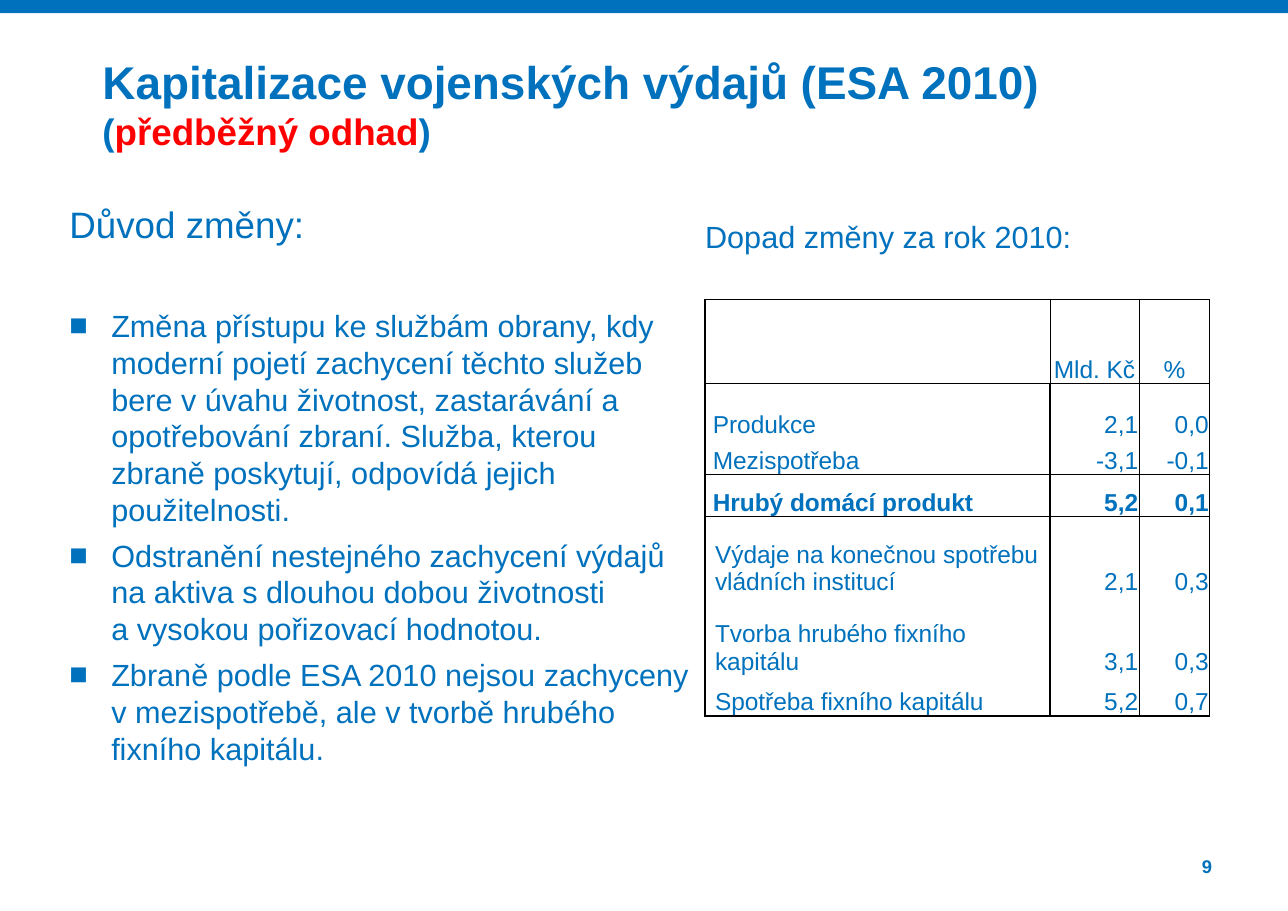
from dataclasses import dataclass

from lxml import etree
from pptx import Presentation
from pptx import util as u
from pptx.dml.color import RGBColor
from pptx.enum import shapes, text
from pptx.oxml import ns
from pptx.slide import Slide
from pptx.table import _Cell
from pptx.text.text import Font, TextFrame, _Paragraph

COLORS = {"blue": "0071BC", "red": "FF0000", "black": "000000"}
FONT = "Arial"
BULLET_INDENT = u.Inches(0.38)
TABLE_TEXT_SIZE = 16
COLUMN_WIDTHS = (3.13, 0.81, 0.64)

BULLETS = (
    "Změna přístupu ke službám obrany, kdy moderní pojetí zachycení těchto služeb bere "
    "v úvahu životnost, zastarávání a opotřebování zbraní. Služba, kterou zbraně "
    "poskytují, odpovídá jejich použitelnosti.",
    "Odstranění nestejného zachycení výdajů na aktiva s dlouhou dobou životnosti\v"
    "a vysokou pořizovací hodnotou.",
    "Zbraně podle ESA 2010 nejsou zachyceny v mezispotřebě, ale v tvorbě hrubého "
    "fixního kapitálu.",
)


@dataclass(frozen=True)
class ImpactRow:
    label: str
    billions: str
    percent: str
    height: float
    label_margin: float = 0.07
    bold: bool = False
    line_above: float = 0
    line_below: float = 0
    header: bool = False


ROWS = (
    ImpactRow("", "Mld. Kč", "%", 0.76, line_above=1, line_below=0.5, header=True),
    ImpactRow("Produkce", "2,1", "0,0", 0.5, line_above=0.5),
    ImpactRow("Mezispotřeba", "-3,1", "-0,1", 0.33, line_below=0.5),
    ImpactRow("Hrubý domácí produkt", "5,2", "0,1", 0.38, bold=True,
              line_above=0.5, line_below=0.5),
    ImpactRow("Výdaje na konečnou spotřebu vládních institucí", "2,1", "0,3", 0.72,
              label_margin=0.09, line_above=0.5),
    ImpactRow("Tvorba hrubého fixního kapitálu", "3,1", "0,3", 0.72, label_margin=0.09),
    ImpactRow("Spotřeba fixního kapitálu", "5,2", "0,7", 0.37, label_margin=0.09,
              line_below=1),
)


def format_font(font: Font, size: float, bold: bool = False, color: str = "blue") -> None:
    font.name = FONT
    font.size = u.Pt(size)
    font.bold = bold
    font.color.rgb = RGBColor.from_string(COLORS[color])


def format_runs(paragraph: _Paragraph, size: float, bold: bool = False) -> None:
    for run in paragraph.runs:
        format_font(run.font, size, bold)


def prepare_frame(frame: TextFrame, vertical_margin: float = 0) -> None:
    """Wrap text from the top, without autofit or side margins."""
    frame.word_wrap = True
    frame.auto_size = text.MSO_AUTO_SIZE.NONE
    frame.vertical_anchor = text.MSO_ANCHOR.TOP
    frame.margin_left = frame.margin_right = 0
    frame.margin_top = frame.margin_bottom = u.Inches(vertical_margin)


def place(shape, left: float, top: float, width: float, height: float) -> None:
    shape.left, shape.top = u.Inches(left), u.Inches(top)
    shape.width, shape.height = u.Inches(width), u.Inches(height)


def set_bullet(paragraph: _Paragraph, character: str = "") -> None:
    """Give a hanging bullet, or clear the inherited one if no character is given."""
    properties = paragraph._p.get_or_add_pPr()
    indent = BULLET_INDENT if character else 0
    properties.set("marL", str(indent))
    properties.set("indent", str(-indent))
    if character:
        etree.SubElement(properties, ns.qn("a:buFont"), typeface=FONT)
        etree.SubElement(properties, ns.qn("a:buChar"), char=character)
    else:
        etree.SubElement(properties, ns.qn("a:buNone"))


def add_top_bar(slide: Slide, width: int) -> None:
    bar = slide.shapes.add_shape(shapes.MSO_SHAPE.RECTANGLE, 0, 0, width, u.Inches(0.12))
    bar.shadow.inherit = False
    bar.fill.solid()
    bar.fill.fore_color.rgb = RGBColor.from_string(COLORS["blue"])
    bar.line.fill.background()


def fill_title(slide: Slide) -> None:
    title = slide.shapes.title
    place(title, 0.93, 0.49, 10.08, 1.06)
    frame = title.text_frame
    prepare_frame(frame)
    frame.text = "Kapitalizace vojenských výdajů (ESA 2010)"
    heading, subtitle = frame.paragraphs[0], frame.add_paragraph()
    format_runs(heading, 30, bold=True)
    for part, color in (("(", "blue"), ("předběžný odhad", "red"), (")", "blue")):
        run = subtitle.add_run()
        run.text = part
        format_font(run.font, 24, bold=True, color=color)
    for paragraph in frame.paragraphs:
        paragraph.alignment = text.PP_ALIGN.LEFT


def fill_reasons(slide: Slide) -> None:
    body = slide.placeholders[1]
    place(body, 0.63, 1.76, 5.63, 5.61)
    frame = body.text_frame
    prepare_frame(frame)
    frame.text = "Důvod změny:"
    heading = frame.paragraphs[0]
    set_bullet(heading)
    heading.line_spacing = u.Pt(34)
    heading.space_before = u.Pt(0)
    format_runs(heading, 24)
    for index, reason in enumerate(BULLETS):
        paragraph = frame.add_paragraph()
        paragraph.text = reason
        set_bullet(paragraph, "■")
        paragraph.space_before = u.Pt(6 if index else 40)
        format_runs(paragraph, 20)


def add_label(slide: Slide, label: str, box: tuple[float, float, float, float], size: float,
              bold: bool = False, alignment=text.PP_ALIGN.LEFT,
              vertical_margin: float = 0) -> None:
    textbox = slide.shapes.add_textbox(*map(u.Inches, box))
    prepare_frame(textbox.text_frame, vertical_margin)
    textbox.text_frame.text = label
    paragraph = textbox.text_frame.paragraphs[0]
    paragraph.alignment = alignment
    format_runs(paragraph, size, bold)


def set_borders(cell: _Cell, widths: dict[str, float]) -> None:
    """Draw cell edges by side letter; a zero width hides the edge."""
    properties = cell._tc.get_or_add_tcPr()
    for index, (side, width) in enumerate(widths.items()):
        line = etree.Element(ns.qn(f"a:ln{side}"), w=str(u.Pt(width)))
        if width:
            fill = etree.SubElement(line, ns.qn("a:solidFill"))
            etree.SubElement(fill, ns.qn("a:srgbClr"), val=COLORS["black"])
        else:
            etree.SubElement(line, ns.qn("a:noFill"))
        properties.insert(index, line)


def fill_cell(cell: _Cell, row: ImpactRow, column: int) -> None:
    cell.fill.background()
    inner = 0.5 if row.header else 1
    set_borders(cell, {"L": inner if column else 1,
                       "R": inner if column < len(COLUMN_WIDTHS) - 1 else 1,
                       "T": row.line_above, "B": row.line_below})
    cell.vertical_anchor = text.MSO_ANCHOR.BOTTOM
    cell.margin_left = u.Inches(0.01 if column else row.label_margin)
    cell.margin_top = cell.margin_right = u.Inches(0.01)
    cell.margin_bottom = 0
    cell.text = (row.label, row.billions, row.percent)[column]
    paragraph = cell.text_frame.paragraphs[0]
    if row.header:
        paragraph.alignment = text.PP_ALIGN.CENTER
    else:
        paragraph.alignment = text.PP_ALIGN.RIGHT if column else text.PP_ALIGN.LEFT
    format_runs(paragraph, TABLE_TEXT_SIZE, row.bold)


def add_impact_table(slide: Slide) -> None:
    size = sum(COLUMN_WIDTHS), sum(row.height for row in ROWS)
    frame = slide.shapes.add_table(len(ROWS), len(COLUMN_WIDTHS), u.Inches(6.4),
                                   u.Inches(2.72), *map(u.Inches, size))
    table = frame.table
    table.first_row = table.horz_banding = False
    for column, width in zip(table.columns, COLUMN_WIDTHS):
        column.width = u.Inches(width)
    for table_row, row in zip(table.rows, ROWS):
        table_row.height = u.Inches(row.height)
        for column, cell in enumerate(table_row.cells):
            fill_cell(cell, row, column)


def main() -> None:
    presentation = Presentation()
    presentation.slide_width = u.Inches(11.69)
    presentation.slide_height = u.Inches(8.27)
    slide = presentation.slides.add_slide(presentation.slide_layouts[1])
    add_top_bar(slide, presentation.slide_width)
    add_label(slide, "9", (10.22, 7.76, 0.78, 0.21), 12, bold=True,
              alignment=text.PP_ALIGN.RIGHT)
    fill_reasons(slide)
    fill_title(slide)
    add_impact_table(slide)
    add_label(slide, "Dopad změny za rok 2010:", (6.4, 1.93, 4.17, 0.55), 20,
              vertical_margin=0.05)
    presentation.save("out.pptx")


if __name__ == "__main__":
    main()
